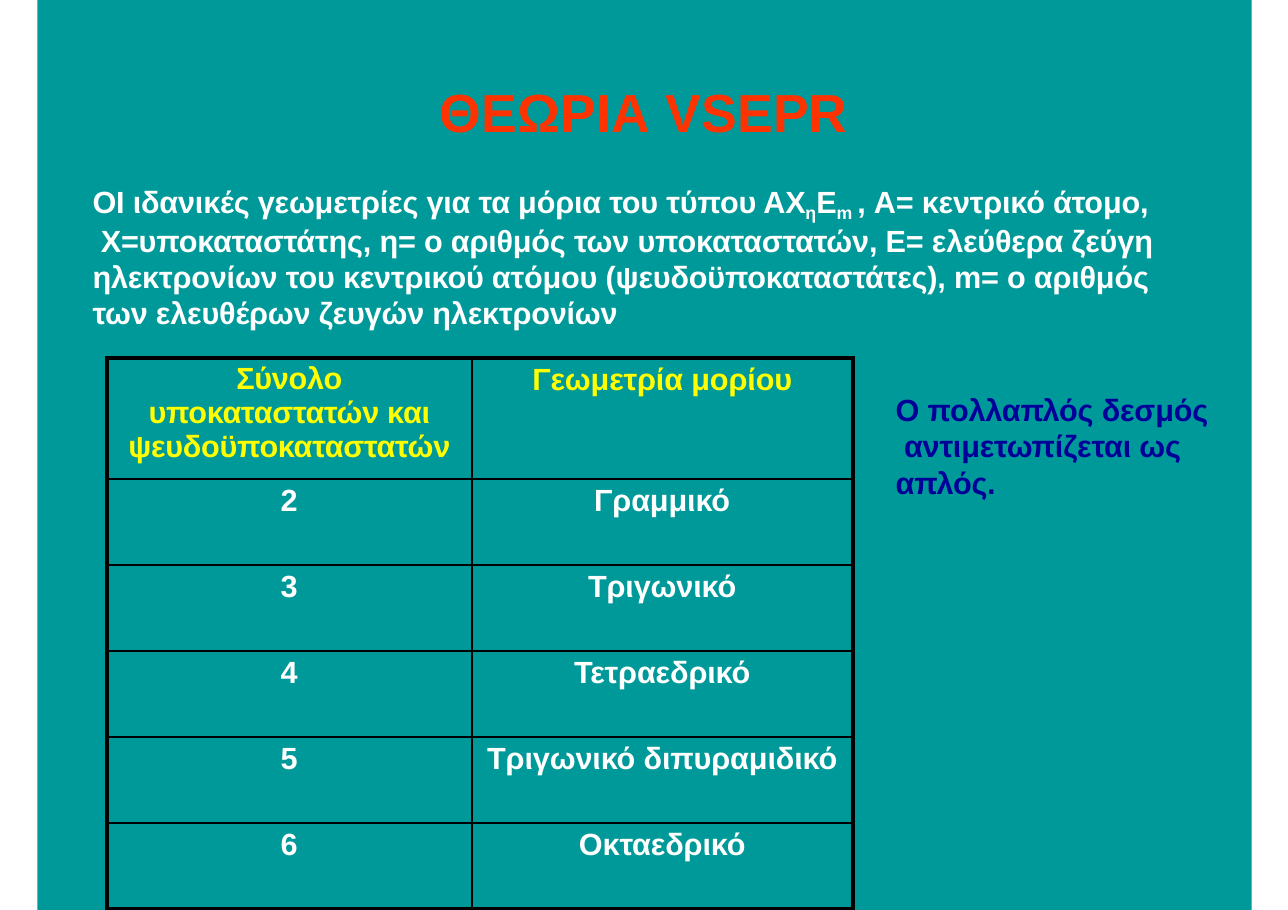
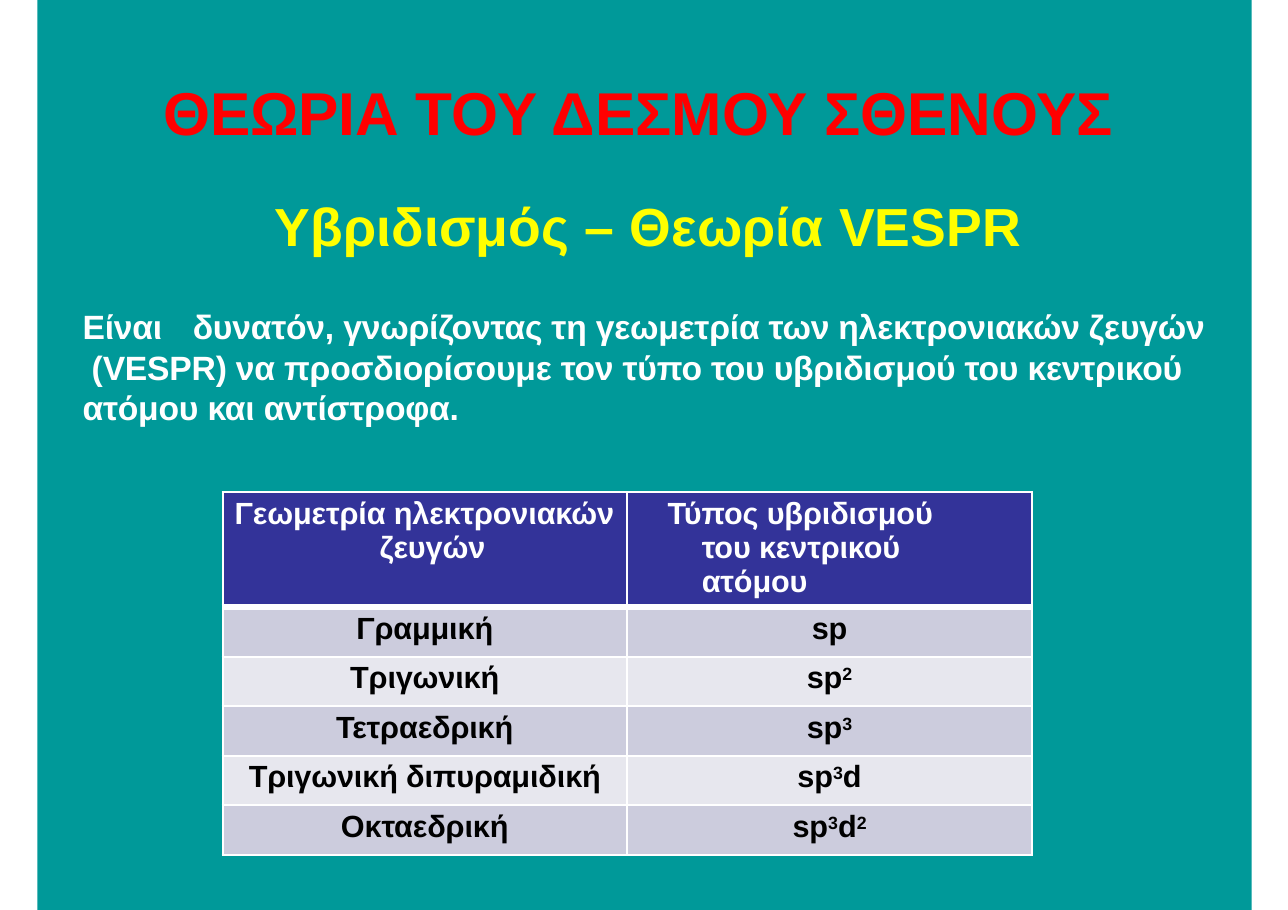
import pptx
import pptx.dml.color
import pptx.enum.shapes
import pptx.enum.text
import pptx.oxml
import pptx.oxml.ns
import pptx.util
import lxml.etree

Inches = pptx.util.Inches
Pt = pptx.util.Pt
Align = pptx.enum.text.PP_ALIGN

COLOURS = {
    "teal": "009999", "white": "FFFFFF", "black": "000000", "yellow": "FFFF00",
    "orange": "FF3300", "red": "FF0000", "navy": "000099",
    "indigo": "333399", "lilac": "CCCCDD", "mist": "E7E7EE",
}


def rgb(name):
    return pptx.dml.color.RGBColor.from_string(COLOURS[name])


def child(parent, tag, **attributes):
    return lxml.etree.SubElement(parent, pptx.oxml.ns.qn(tag), **attributes)


def write(frame, text, size=20, colour="white", align=Align.LEFT, tracking=-0.1,
          shift=0, leading=None, before=3, left=0, hanging=0, tab=None):
    para = frame.paragraphs[0]
    para.alignment = align
    para.space_before = Pt(before)
    if leading:
        para.line_spacing = leading
    properties = para._p.get_or_add_pPr()
    properties.set("marL", str(Inches(left)))
    properties.set("indent", str(Inches(-hanging)))
    if tab:
        child(child(properties, "a:tabLst"), "a:tab", pos=str(Inches(tab)), algn="l")
    for row, line in enumerate(text.split("\n")):
        if row:
            para.add_line_break()
        for index, piece in enumerate(line.split("^")):
            if not piece:
                continue
            span = para.add_run()
            span.text = piece
            span.font.name = "Arial"
            span.font.size = Pt(size)
            span.font.bold = True
            span.font.color.rgb = rgb(colour)
            style = span._r.get_or_add_rPr()
            style.set("spc", str(round(tracking * 100)))
            if index % 2:
                style.set("baseline", str(shift * 1000))


class Deck:
    def __init__(self):
        self.deck = pptx.Presentation()
        self.deck.slide_width = Inches(11.69)
        self.deck.slide_height = Inches(8.26)
        self.page = None

    def add_page(self):
        self.page = self.deck.slides.add_slide(self.deck.slide_layouts[6])
        panel = self.page.shapes.add_shape(
            pptx.enum.shapes.MSO_SHAPE.RECTANGLE,
            Inches(0.34), 0, Inches(11.02), self.deck.slide_height)
        panel.shadow.inherit = False
        panel.fill.solid()
        panel.fill.fore_color.rgb = rgb("teal")
        panel.line.fill.background()

    def text(self, area, text, inset=0.01, **style):
        box = self.page.shapes.add_textbox(*map(Inches, area))
        frame = box.text_frame
        frame.word_wrap = True
        frame.margin_left = frame.margin_right = frame.margin_bottom = 0
        frame.margin_top = Inches(inset)
        write(frame, text, **{"before": 1.1, "left": 0.01, **style})

    def title(self, area, text, **style):
        self.text(area, text, inset=0.02, **{"size": 35, "tracking": 0.1, **style})

    def table(self, left, top, widths, heights, rows, header, body, fills,
              line, outer=1.5, rule=1.5):
        grid = self.page.shapes.add_table(
            len(rows), len(widths), Inches(left), Inches(top),
            Inches(sum(widths)), Inches(sum(heights))).table
        grid.first_row = grid.horz_banding = False
        for column, width in zip(grid.columns, widths):
            column.width = Inches(width)
        last_row, last_column = len(rows) - 1, len(widths) - 1
        for r, texts in enumerate(rows):
            grid.rows[r].height = Inches(heights[r])
            for c, text in enumerate(texts):
                cell = grid.cell(r, c)
                cell.margin_left = cell.margin_right = cell.margin_bottom = 0
                cell.margin_top = Inches(0.04)
                cell.fill.solid()
                cell.fill.fore_color.rgb = rgb(fills[r])
                write(cell.text_frame, text, **(body if r else header[c]))
                self.borders(cell, line, {
                    "L": 1.5 if c else outer,
                    "R": outer if c == last_column else 1.5,
                    "T": outer if r == 0 else rule if r == 1 else 1.5,
                    "B": rule if r == 0 else outer if r == last_row else 1.5,
                })

    def borders(self, cell, colour, weights):
        properties = cell._tc.get_or_add_tcPr()
        for position, (side, weight) in enumerate(weights.items()):
            edge = child(properties, "a:ln" + side, w=str(Pt(weight)))
            child(child(edge, "a:solidFill"), "a:srgbClr", val=COLOURS[colour])
            properties.insert(position, edge)

    def save(self):
        self.deck.save("out.pptx")


def vsepr_page(deck):
    deck.add_page()
    deck.title((3.98, 0.7, 3.75, 0.62), "ΘΕΩΡΙΑ VSEPR", colour="orange")
    deck.text(
        (0.81, 1.65, 9.85, 1.35),
        "ΟΙ ιδανικές γεωμετρίες για τα μόρια του τύπου ΑΧ^η^E^m ^, Α= κεντρικό άτομο,\n"
        " Χ=υποκαταστάτης, η= ο αριθμός των υποκαταστατών, Ε= ελεύθερα ζεύγη\n"
        "ηλεκτρονίων του κεντρικού ατόμου (ψευδοϋποκαταστάτες), m= ο αριθμός\n"
        "των ελευθέρων ζευγών ηλεκτρονίων",
        shift=-21, leading=0.99, left=0.03, tracking=-0.15)
    heading = {"colour": "yellow", "align": Align.CENTER}
    deck.table(
        0.97, 3.25, [3.31, 3.46], [1.1] + [0.78] * 5,
        [("Σύνολο\nυποκαταστατών και\nψευδοϋποκαταστατών", "Γεωμετρία μορίου"),
         ("2", "Γραμμικό"),
         ("3", "Τριγωνικό"),
         ("4", "Τετραεδρικό"),
         ("5", "Τριγωνικό διπυραμιδικό"),
         ("6", "Οκταεδρικό")],
        header=[{**heading, "leading": 0.99, "tracking": -0.2}, heading],
        body={"align": Align.CENTER}, fills=["teal"] * 6, line="black", outer=3)
    deck.text((8.12, 3.55, 2.95, 1.02),
              "Ο πολλαπλός δεσμός\n αντιμετωπίζεται ως\nαπλός.",
              colour="navy", leading=0.99, tracking=-0.15)


def hybridisation_page(deck):
    deck.add_page()
    deck.title((1.47, 0.66, 8.78, 0.69), "ΘΕΩΡΙΑ ΤΟΥ ΔΕΣΜΟΥ ΣΘΕΝΟΥΣ",
               size=39.5, colour="red", tracking=0)
    deck.title((2.48, 1.73, 6.9, 0.62), "Υβριδισμός – Θεωρία VESPR", colour="yellow")
    deck.text(
        (0.74, 2.77, 10.34, 1.13),
        "Είναι\tδυνατόν, γνωρίζοντας τη γεωμετρία των ηλεκτρονιακών ζευγών\n"
        " (VESPR) να προσδιορίσουμε τον τύπο του υβριδισμού του κεντρικού\n"
        "ατόμου και αντίστροφα.",
        size=22, leading=1.0, before=0.9, tab=0.92)
    deck.table(
        2.02, 4.47, [3.67, 3.68], [1.04] + [0.45] * 5,
        [("Γεωμετρία ηλεκτρονιακών\n ζευγών", "Τύπος υβριδισμού\nτου κεντρικού\nατόμου"),
         ("Γραμμική", "sp"),
         ("Τριγωνική", "sp^2^"),
         ("Τετραεδρική", "sp^3^"),
         ("Τριγωνική διπυραμιδική", "sp^3^d"),
         ("Οκταεδρική", "sp^3^d^2^")],
        header=[{"left": 1.35, "hanging": 1.24}, {"left": 0.68, "hanging": 0.31}],
        body={"colour": "black", "align": Align.CENTER, "shift": 26},
        fills=["indigo"] + ["lilac", "mist"] * 2 + ["lilac"], line="white", rule=4.25)


def main():
    deck = Deck()
    vsepr_page(deck)
    hybridisation_page(deck)
    deck.save()


if __name__ == "__main__":
    main()
